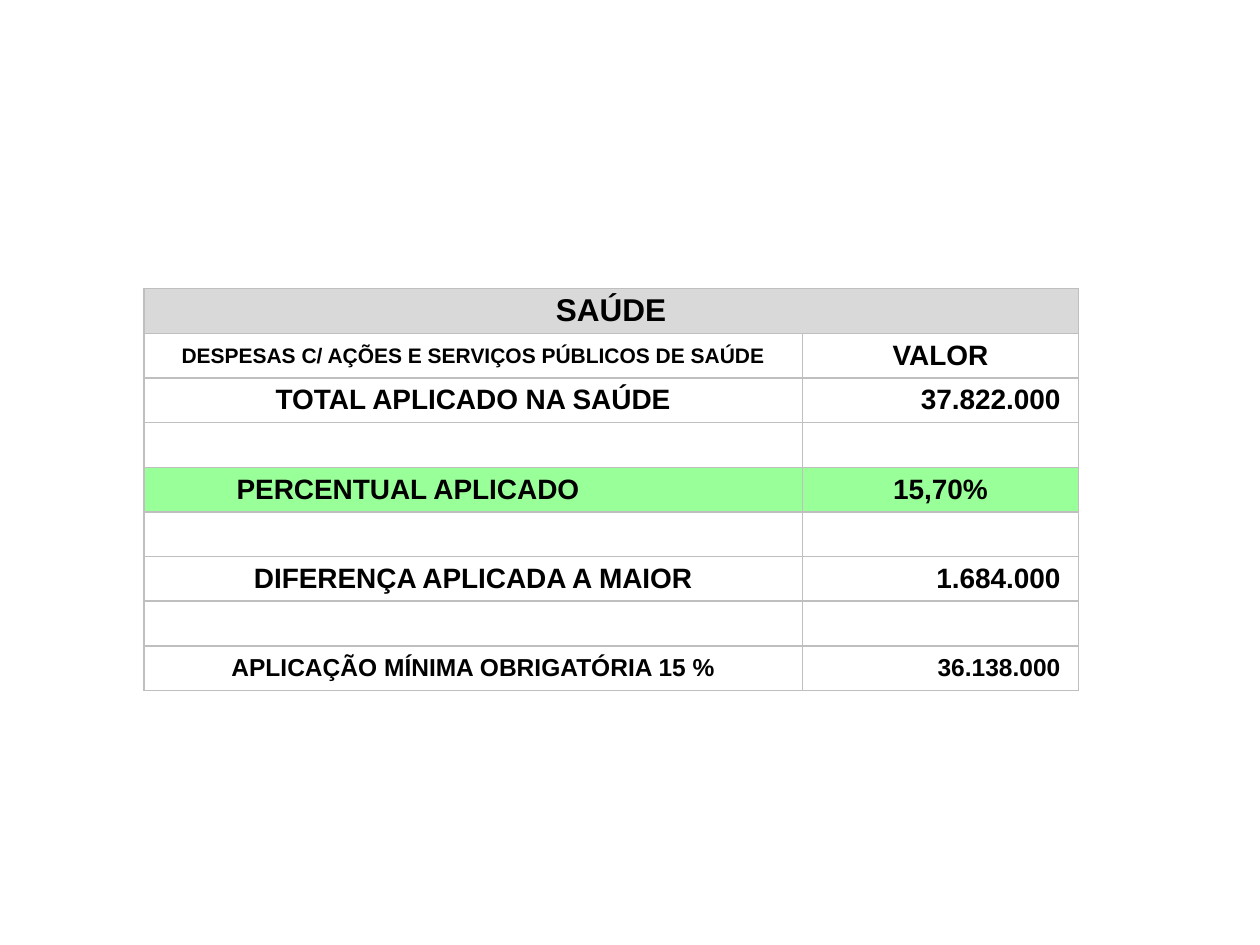
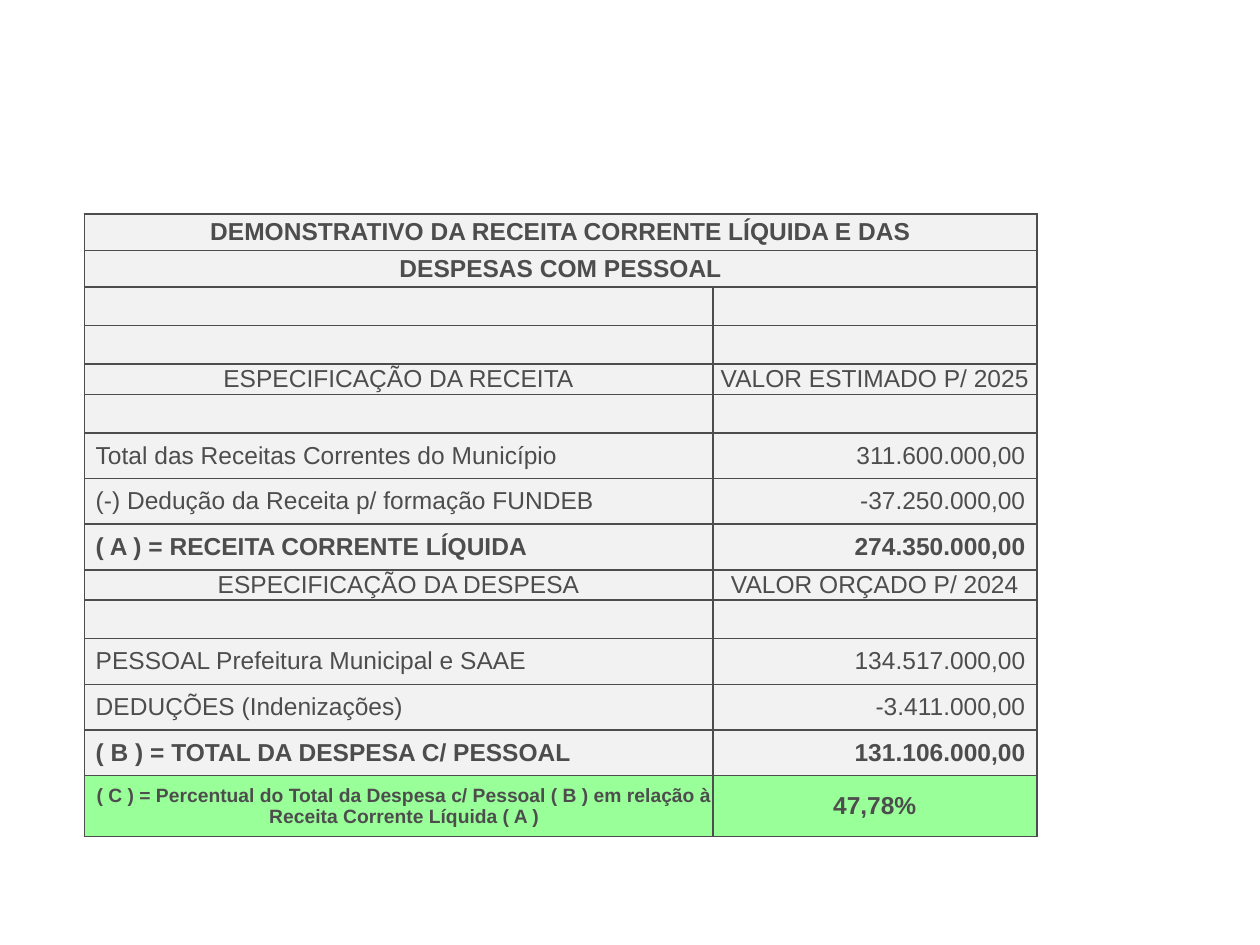
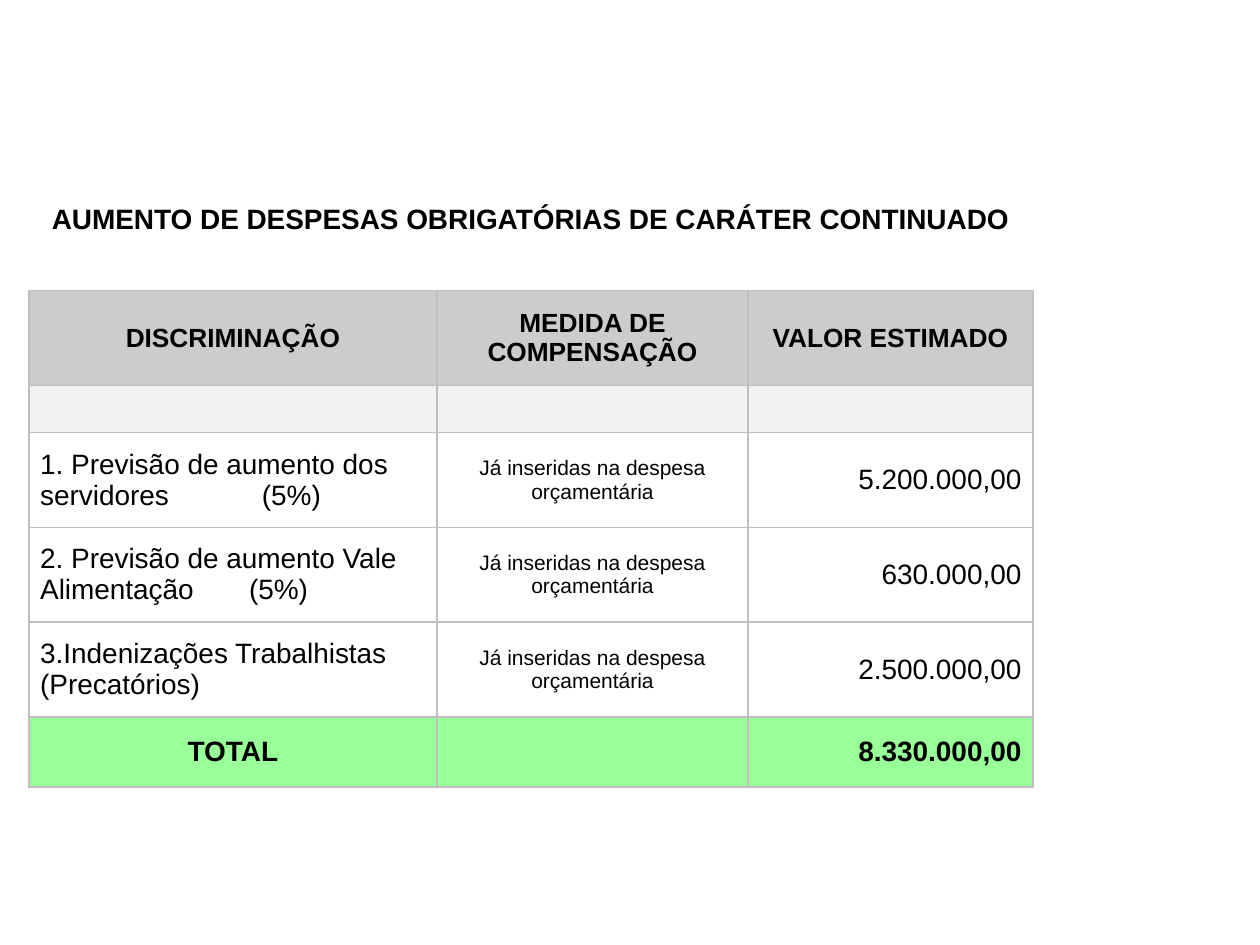
"""Build three budget tables: health spending, personnel spending and mandatory spending growth."""
from dataclasses import dataclass

from lxml.etree import SubElement
from pptx import Presentation
from pptx.dml.color import RGBColor as RGB
from pptx.enum.text import MSO_ANCHOR as ANCHOR, PP_ALIGN as ALIGN
from pptx.oxml.ns import qn
from pptx.util import Cm, Pt


@dataclass(frozen=True)
class Theme:
    font: str = "Arial"
    black: str = "000000"
    slate: str = "4D4D4D"
    rule: str = "BFBFBF"
    white: str = "FFFFFF"
    pale: str = "F2F2F2"
    silver: str = "D9D9D9"
    grey: str = "CCCCCC"
    green: str = "99FF99"
    title: int = 18
    large: int = 16
    head: int = 15
    body: int = 14
    small: int = 12
    note: int = 11


T = Theme()


def write(cell, text, size=T.body, bold=False, color=T.black, align=ALIGN.CENTER, left=0, right=0, tab=None):
    cell.margin_left, cell.margin_right = Cm(left), Cm(right)
    tf = cell.text_frame
    p = tf.paragraphs[0]
    p.alignment = align
    if tab:
        tabs = SubElement(p._p.get_or_add_pPr(), qn("a:tabLst"))
        SubElement(tabs, qn("a:tab"), pos=str(Cm(tab)), algn="l")
    r = p.add_run()
    r.text = text
    r.font.name, r.font.size, r.font.bold = T.font, Pt(size), bold
    r.font.color.rgb = RGB.from_string(color)


def style(cell, fill, line, sides):
    cell.margin_left = cell.margin_right = cell.margin_top = cell.margin_bottom = 0
    cell.vertical_anchor = ANCHOR.MIDDLE
    tc_pr = cell._tc.get_or_add_tcPr()
    for side in "LRTB":
        ln = SubElement(tc_pr, qn(f"a:ln{side}"), w=str(Pt(1)))
        if side in sides:
            SubElement(SubElement(ln, qn("a:solidFill")), qn("a:srgbClr"), val=line)
        else:
            SubElement(ln, qn("a:noFill"))
    if fill:
        cell.fill.solid()
        cell.fill.fore_color.rgb = RGB.from_string(fill)
    else:
        cell.fill.background()


ALL = "LRTB"
LEFT = dict(align=ALIGN.LEFT, left=0.23)
RIGHT = dict(align=ALIGN.RIGHT, right=0.23)
BOLD = dict(bold=True)
BIG = dict(size=T.large)

health_value = dict(align=ALIGN.RIGHT, right=0.36)
health_rows = [
    (0.9, None, "", []),
    (0.9, None, "", []),
    (0.9, None, "B", []),
    (0.9, T.silver, ALL, [("SAÚDE", dict(size=T.title))]),
    (0.9, None, ALL, [("DESPESAS C/ AÇÕES E SERVIÇOS PÚBLICOS DE SAÚDE", dict(size=T.small)), ("VALOR", BIG)]),
    (0.9, None, ALL, [("TOTAL APLICADO NA SAÚDE", BIG), ("37.822.000", BIG | health_value)]),
    (0.9, T.white, ALL, []),
    (0.9, T.green, ALL, [("PERCENTUAL APLICADO", BIG | dict(align=ALIGN.LEFT, left=1.87)), ("15,70%", BIG)]),
    (0.9, None, ALL, []),
    (0.9, None, ALL, [("DIFERENÇA APLICADA A MAIOR", BIG), ("1.684.000", BIG | health_value)]),
    (0.9, None, ALL, []),
    (0.9, T.white, ALL, [("APLICAÇÃO MÍNIMA OBRIGATÓRIA 15 %", {}), ("36.138.000", health_value)]),
]

staff_rows = [
    (0.74, T.pale, ALL, [("DEMONSTRATIVO DA RECEITA CORRENTE LÍQUIDA E DAS", BOLD)]),
    (0.74, T.pale, ALL, [("DESPESAS COM PESSOAL", BOLD)]),
    (0.74, T.pale, ALL, []),
    (0.74, T.pale, ALL, []),
    (0.61, T.pale, ALL, [("ESPECIFICAÇÃO DA RECEITA", {}), ("VALOR ESTIMADO P/ 2025", {})]),
    (0.74, T.pale, ALL, []),
    (0.92, T.pale, ALL, [("Total das Receitas Correntes do Município", LEFT), ("311.600.000,00", RIGHT)]),
    (0.92, T.pale, ALL, [("(-) Dedução da Receita p/ formação FUNDEB", LEFT), ("-37.250.000,00", RIGHT)]),
    (0.92, T.pale, ALL, [("( A ) = RECEITA CORRENTE LÍQUIDA", LEFT | BOLD), ("274.350.000,00", RIGHT | BOLD)]),
    (0.61, T.pale, ALL, [("ESPECIFICAÇÃO DA DESPESA", {}), ("VALOR ORÇADO P/ 2024", {})]),
    (0.74, T.pale, ALL, []),
    (0.92, T.pale, ALL, [("PESSOAL Prefeitura Municipal e SAAE", LEFT), ("134.517.000,00", RIGHT)]),
    (0.92, T.pale, ALL, [("DEDUÇÕES (Indenizações)", LEFT), ("-3.411.000,00", RIGHT)]),
    (0.92, T.pale, ALL, [("( B ) = TOTAL DA DESPESA C/ PESSOAL", LEFT | BOLD), ("131.106.000,00", RIGHT | BOLD)]),
    (1.23, T.green, ALL, [
        ("( C ) = Percentual do Total da Despesa c/ Pessoal ( B ) em relação à Receita Corrente Líquida ( A )",
         BOLD | dict(size=T.note, left=0.23)),
        ("47,78%", BOLD)]),
]

heading = dict(size=T.head, bold=True)
offset = ("Já inseridas na despesa orçamentária", dict(size=T.small))
growth_rows = [
    (0.95, None, "", [("AUMENTO DE DESPESAS OBRIGATÓRIAS DE CARÁTER CONTINUADO", BIG | BOLD)]),
    (0.95, None, "B", []),
    (1.91, T.grey, ALL, [("DISCRIMINAÇÃO", heading), ("MEDIDA DE COMPENSAÇÃO", heading), ("VALOR ESTIMADO", heading)]),
    (0.95, T.pale, ALL, []),
    (1.91, None, ALL, [("1. Previsão de aumento dos servidores\t(5%)", BIG | LEFT | dict(tab=4.47)),
                       offset, ("5.200.000,00", BIG | RIGHT)]),
    (1.91, None, ALL, [("2. Previsão de aumento Vale Alimentação\t(5%)", BIG | LEFT | dict(tab=4.21)),
                       offset, ("630.000,00", BIG | RIGHT)]),
    (1.91, None, ALL, [("3.Indenizações Trabalhistas (Precatórios)", BIG | LEFT),
                       offset, ("2.500.000,00", BIG | RIGHT)]),
    (1.41, T.green, ALL, [("TOTAL", BIG | BOLD), ("", {}), ("8.330.000,00", BIG | RIGHT | BOLD)]),
]

tables = [
    (2.9, 3.12, [13.28, 5.56], T.rule, BOLD, health_rows),
    (1.7, 4.31, [12.67, 6.53], T.slate, dict(color=T.slate), staff_rows),
    (0.58, 3.96, [8.23, 6.27, 5.74], T.rule, {}, growth_rows),
]

prs = Presentation()
prs.slide_width, prs.slide_height = Cm(25.4), Cm(19.05)
blank = prs.slide_layouts[6]

for left, top, widths, line, base, rows in tables:
    s = prs.slides.add_slide(blank)
    height = sum(row[0] for row in rows)
    table = s.shapes.add_table(len(rows), len(widths), Cm(left), Cm(top), Cm(sum(widths)), Cm(height)).table
    table.first_row = table.horz_banding = False
    for column, width in zip(table.columns, widths):
        column.width = Cm(width)
    for i, (row_height, fill, sides, cells) in enumerate(rows):
        table.rows[i].height = Cm(row_height)
        for cell in table.rows[i].cells:
            style(cell, fill, line, sides)
        if len(cells) == 1:
            table.cell(i, 0).merge(table.cell(i, len(widths) - 1))
        for j, (text, options) in enumerate(cells):
            if text:
                write(table.cell(i, j), text, **(base | options))

prs.save("out.pptx")
